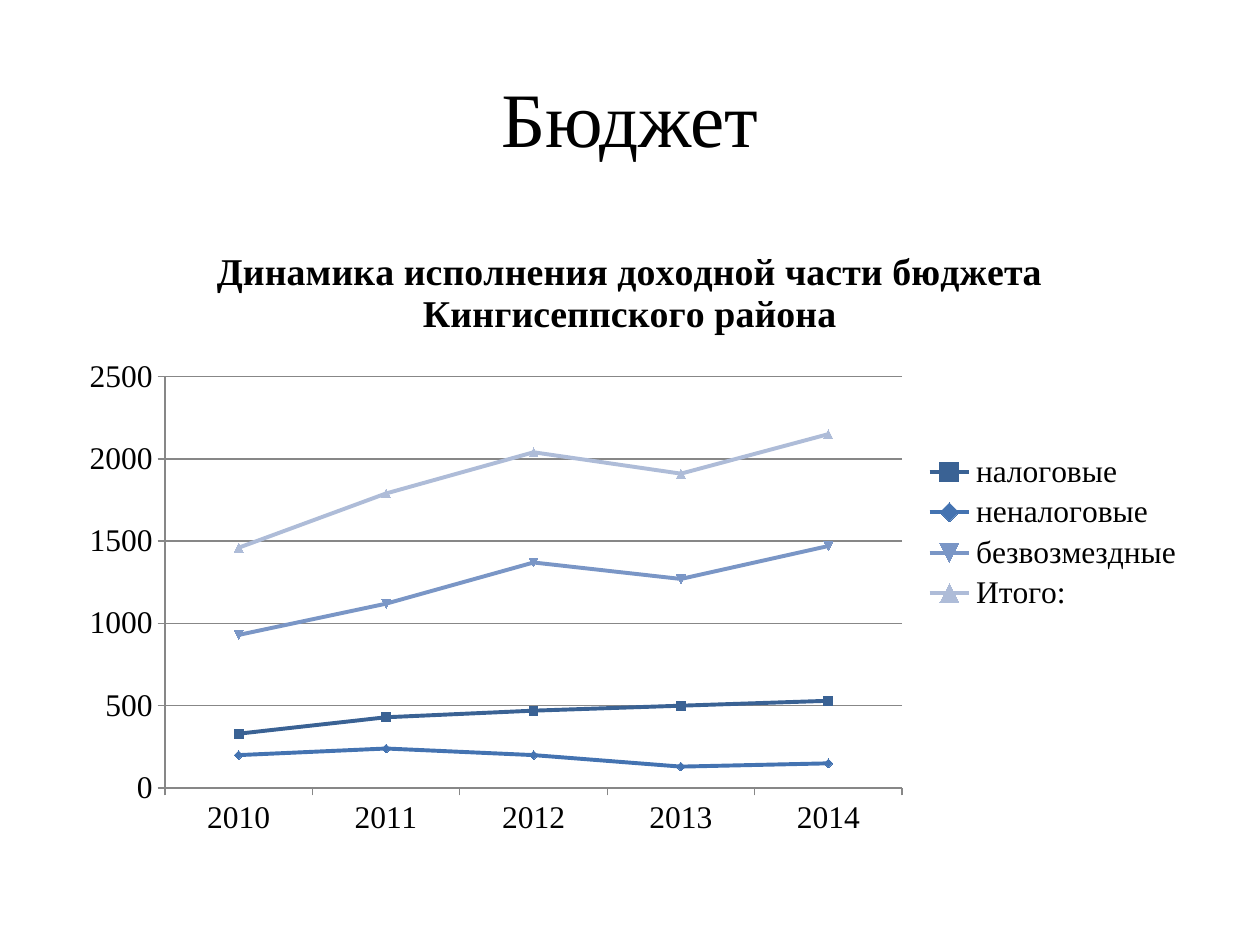
from typing import NamedTuple

from lxml.etree import SubElement
from pptx import Presentation
from pptx.chart.data import CategoryChartData
from pptx.dml.color import RGBColor
from pptx.enum.chart import XL_CHART_TYPE as Kind
from pptx.enum.chart import XL_LEGEND_POSITION as Side
from pptx.enum.chart import XL_MARKER_STYLE as Mark
from pptx.enum.chart import XL_TICK_MARK as Tick
from pptx.enum.text import MSO_ANCHOR as Anchor
from pptx.enum.text import PP_ALIGN as Align
from pptx.oxml.ns import qn
from pptx.util import Cm, Pt

FACE = "Times New Roman"
BLACK = "000000"
GREY = "878787"
LEFT, WIDTH = Cm(1.27), Cm(22.86)
YEARS = ["2010", "2011", "2012", "2013", "2014"]


class Income(NamedTuple):
    name: str
    values: list[int]
    tint: str
    mark: Mark


INCOMES = [
    Income("налоговые", [330, 430, 470, 500, 530], "3A6294", Mark.SQUARE),
    Income("неналоговые", [200, 240, 200, 130, 150], "4473B1", Mark.DIAMOND),
    # The third automatic symbol in the series is a downward triangle.
    Income("безвозмездные", [930, 1120, 1370, 1270, 1470], "7A96C6", Mark.AUTOMATIC),
    Income("Итого:", [1460, 1790, 2040, 1910, 2150], "AEBCD8", Mark.TRIANGLE),
]


def paint(target, tint: str) -> None:
    """Give a fill a solid colour."""
    target.solid()
    target.fore_color.rgb = RGBColor.from_string(tint)


def style(font, size: float, bold: bool = False) -> None:
    font.name, font.size, font.bold = FACE, Pt(size), bold
    paint(font.fill, BLACK)


def stroke(line, tint: str, width: float) -> None:
    line.width = Pt(width)
    paint(line.fill, tint)


def add_head(slide) -> None:
    box = slide.shapes.add_textbox(LEFT, Cm(0.76), WIDTH, Cm(3.18))
    frame = box.text_frame
    frame.word_wrap = True
    frame.vertical_anchor = Anchor.MIDDLE
    para = frame.paragraphs[0]
    para.text = "Бюджет"
    para.alignment = Align.CENTER
    style(para.font, 44)


def place_plot(chart, **spans: float) -> None:
    """Set the inner plot area as shares of the chart."""
    area = chart.element.find(".//" + qn("c:plotArea"))
    layout = area.find(qn("c:layout"))
    if layout is None:
        layout = SubElement(area, qn("c:layout"))
        area.insert(0, layout)
    manual = SubElement(layout, qn("c:manualLayout"))
    parts = {"layoutTarget": "inner", "xMode": "edge", "yMode": "edge", **spans}
    for tag, value in parts.items():
        SubElement(manual, qn(f"c:{tag}")).set("val", str(value))


def add_lines(slide) -> None:
    data = CategoryChartData()
    data.categories = YEARS
    for income in INCOMES:
        data.add_series(income.name, income.values)
    chart = slide.shapes.add_chart(
        Kind.LINE_MARKERS, LEFT, Cm(4.45), WIDTH, Cm(12.57), data
    ).chart
    style(chart.font, 18)

    chart.has_title = True
    para = chart.chart_title.text_frame.paragraphs[0]
    para.text = "Динамика исполнения доходной части бюджета Кингисеппского района"
    style(para.font, 21.6, bold=True)
    chart.chart_title.include_in_layout = False

    chart.has_legend = True
    chart.legend.position = Side.RIGHT
    chart.legend.include_in_layout = False

    for axis in (chart.category_axis, chart.value_axis):
        axis.major_tick_mark = Tick.OUTSIDE
        axis.minor_tick_mark = Tick.NONE
        stroke(axis.format.line, GREY, 0.75)
    scale = chart.value_axis
    scale.minimum_scale, scale.maximum_scale, scale.major_unit = 0, 2500, 500
    scale.has_major_gridlines = True
    stroke(scale.major_gridlines.format.line, GREY, 0.75)

    plot = chart.plots[0]
    plot.vary_by_categories = False
    for line, income in zip(plot.series, INCOMES):
        line.smooth = False
        stroke(line.format.line, income.tint, 2.25)
        if income.mark != Mark.AUTOMATIC:
            line.marker.style = income.mark
        line.marker.size = 5
        paint(line.marker.format.fill, income.tint)
        stroke(line.marker.format.line, income.tint, 0.75)
    place_plot(chart, x=0.09, y=0.25, w=0.65, h=0.66)


def main() -> None:
    deck = Presentation()
    deck.slide_width, deck.slide_height = Cm(25.4), Cm(19.05)
    slide = deck.slides.add_slide(deck.slide_layouts[6])
    add_head(slide)
    add_lines(slide)
    deck.save("out.pptx")


if __name__ == "__main__":
    main()
